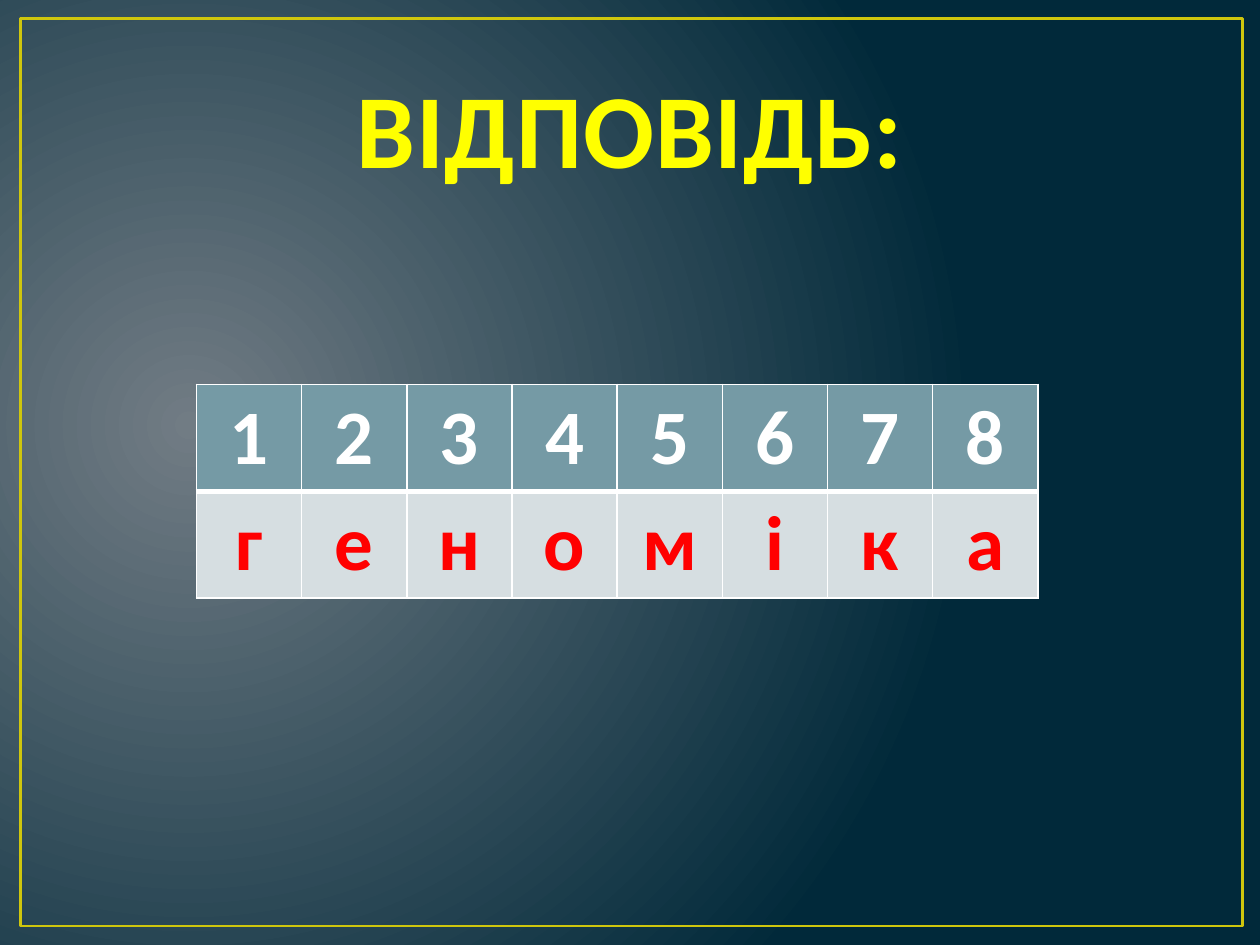
from pptx import Presentation
from pptx.dml.color import RGBColor
from pptx.enum.shapes import MSO_SHAPE
from pptx.enum.text import MSO_ANCHOR, PP_ALIGN
from pptx.oxml import parse_xml
from pptx.oxml.ns import nsdecls
from pptx.util import Cm, Pt

COLOURS = {
    "glow": "717C84",
    "night": "01293A",
    "frame": "CFC60D",
    "title": "FFFF00",
    "outline": "384F55",
    "white": "FFFFFF",
    "header": "759AA5",
    "body": "D6DEE1",
    "letter": "FF0000",
}
WORD = "геноміка"


def colour(name):
    """Return the named colour."""
    return RGBColor.from_string(COLOURS[name])


def line_xml(tag, name, width):
    """Return a solid line element with the given tag, colour and width in points."""
    return parse_xml(
        f'<a:{tag} {nsdecls("a")} w="{int(Pt(width))}"><a:solidFill>'
        f'<a:srgbClr val="{COLOURS[name]}"/></a:solidFill></a:{tag}>'
    )


def write(text_frame, text, size, ink):
    """Write one bold centred line and return its run."""
    para = text_frame.paragraphs[0]
    para.alignment = PP_ALIGN.CENTER
    span = para.add_run()
    span.text = text
    span.font.name = "Calibri"
    span.font.size = Pt(size)
    span.font.bold = True
    span.font.color.rgb = colour(ink)
    return span


def paint_background(page):
    """Fill the page with a circular gradient that glows at the left."""
    background = parse_xml(
        f'<p:bg {nsdecls("p", "a")}><p:bgPr><a:gradFill rotWithShape="1"><a:gsLst>'
        f'<a:gs pos="0"><a:srgbClr val="{COLOURS["glow"]}"/></a:gs>'
        f'<a:gs pos="100000"><a:srgbClr val="{COLOURS["night"]}"/></a:gs></a:gsLst>'
        '<a:path path="circle"><a:fillToRect l="15000" t="50000" r="85000" b="60000"/>'
        "</a:path></a:gradFill><a:effectLst/></p:bgPr></p:bg>"
    )
    page.element.cSld.insert(0, background)


def add_frame(page, left, top, width, height):
    """Draw the thin border behind everything else."""
    frame = page.shapes.add_shape(
        MSO_SHAPE.RECTANGLE, Cm(left), Cm(top), Cm(width), Cm(height)
    )
    frame.shadow.inherit = False
    frame.fill.background()
    frame.line.color.rgb = colour("frame")
    frame.line.width = Pt(1.5)
    page.shapes.element.insert(2, frame.element)


def place_title(page, text, left, top, width, height):
    """Move the title placeholder into its box and format its text."""
    title = page.shapes.title
    title.left, title.top = Cm(left), Cm(top)
    title.width, title.height = Cm(width), Cm(height)
    title.text_frame.vertical_anchor = MSO_ANCHOR.BOTTOM
    title.text_frame.word_wrap = True
    properties = write(title.text_frame, text, 60, "title").font._element
    properties.set("spc", "50")
    properties.insert(0, line_xml("ln", "outline", 1.05))


def format_cell(cell, text, ink, fill, top_width, bottom_width):
    """Write, fill and border one table cell."""
    write(cell.text_frame, text, 44, ink)
    cell.fill.solid()
    cell.fill.fore_color.rgb = colour(fill)
    properties = cell._tc.get_or_add_tcPr()
    widths = {"lnL": 1, "lnR": 1, "lnT": top_width, "lnB": bottom_width}
    for place, (tag, width) in enumerate(widths.items()):
        properties.insert(place, line_xml(tag, "white", width))


def add_answer_table(page, word, left, top, side):
    """Set the numbered letters of the word in a grid of square cells."""
    count = len(word)
    table = page.shapes.add_table(
        2, count, Cm(left), Cm(top), Cm(count * side), Cm(2 * side)
    ).table
    for column, letter in enumerate(word):
        table.columns[column].width = Cm(side)
        format_cell(table.cell(0, column), str(column + 1), "white", "header", 1, 3)
        format_cell(table.cell(1, column), letter, "letter", "body", 3, 1)


def main():
    """Build and save the deck."""
    deck = Presentation()
    deck.slide_width, deck.slide_height = Cm(25.4), Cm(19.05)
    page = deck.slides.add_slide(deck.slide_layouts[5])
    paint_background(page)
    add_frame(page, 0.41, 0.38, 24.64, 18.29)
    place_title(page, "ВІДПОВІДЬ:", 1.27, 0.76, 22.86, 3.18)
    add_answer_table(page, WORD, 3.96, 7.75, 2.12)
    deck.save("out.pptx")


if __name__ == "__main__":
    main()
